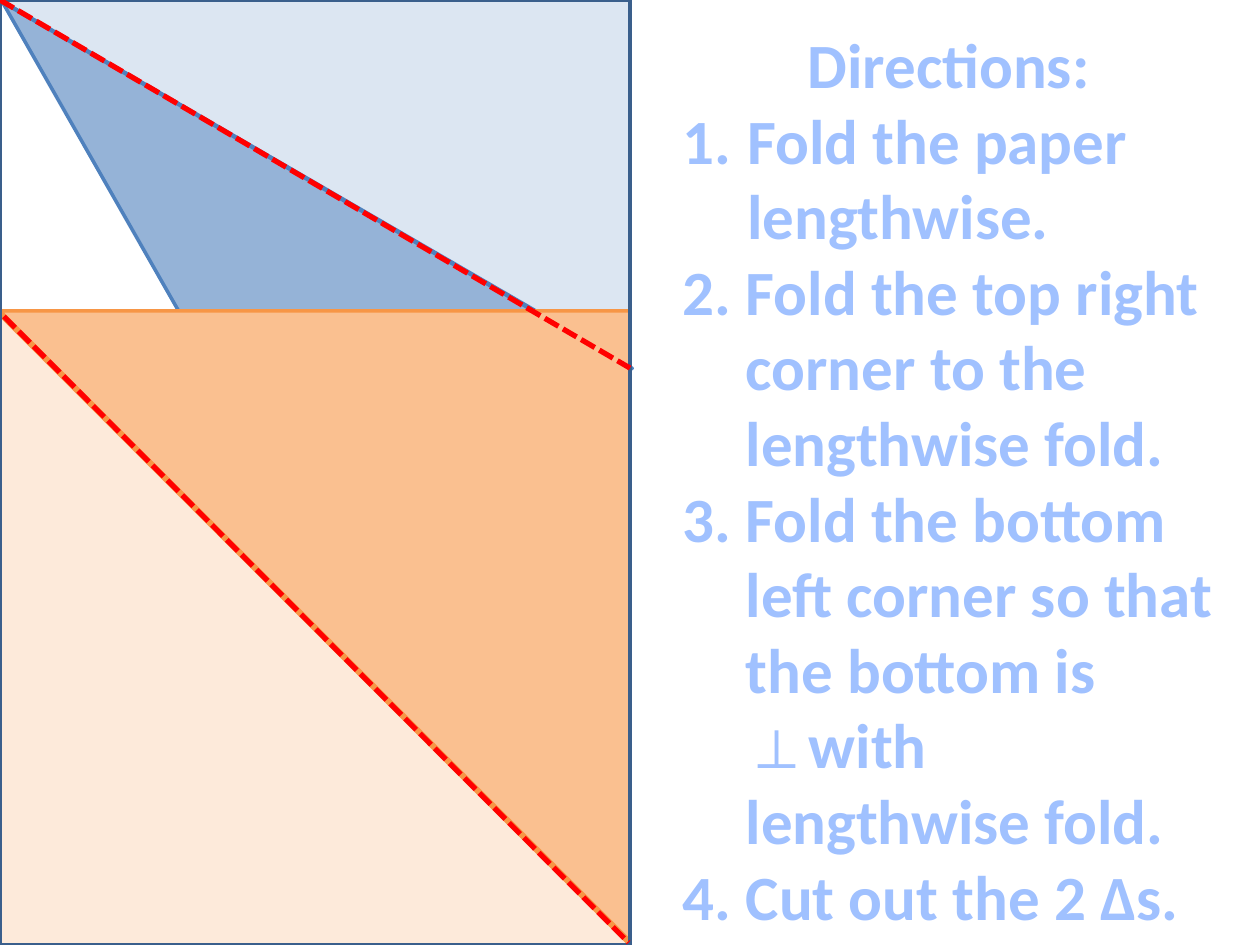
"""Build a slide with a paper-folding diagram and its directions."""
from lxml.etree import SubElement
from pptx import Presentation
from pptx.dml.color import RGBColor
from pptx.enum.dml import MSO_LINE
from pptx.enum.shapes import MSO_CONNECTOR, MSO_SHAPE
from pptx.enum.text import MSO_ANCHOR, MSO_AUTO_SIZE, PP_ALIGN
from pptx.oxml.ns import qn
from pptx.util import Cm, Pt


def tint(hue):
    return RGBColor.from_string(hue)


def write(para, text, font="Calibri"):
    run = para.add_run()
    run.text = text
    run.font.name = font
    run.font.size = Pt(36)
    run.font.bold = True
    run.font.color.rgb = tint("A0C1FF")


deck = Presentation()
deck.slide_width, deck.slide_height = Cm(25.4), Cm(19.05)
slide = deck.slides.add_slide(deck.slide_layouts[1])
shapes = slide.shapes
title, body = shapes.title, slide.placeholders[1]

for holder, top, height in [(title, 0.38, 1.65), (body, 1.91, 17.1)]:
    holder.left, holder.top = Cm(13.51), Cm(top)
    holder.width, holder.height = Cm(11.23), Cm(height)
    frame = holder.text_frame
    frame.word_wrap = True
    frame.auto_size = MSO_AUTO_SIZE.NONE
    frame.vertical_anchor = MSO_ANCHOR.TOP

head = title.text_frame.paragraphs[0]
head.alignment = PP_ALIGN.CENTER
write(head, "Directions:")

steps = [
    (1, 1.3, ["Fold the paper"]),
    (None, 1.3, ["lengthwise."]),
    (2, 1.27, ["Fold the top right corner to the lengthwise fold."]),
    (2, 1.27, ["Fold the bottom left corner so that the bottom is ", "⊥", "with lengthwise fold."]),
    (2, 1.27, ["Cut out the 2 Δs."]),
]
for index, (start, indent, parts) in enumerate(steps):
    frame = body.text_frame
    para = frame.add_paragraph() if index else frame.paragraphs[0]
    para.space_before = Pt(0)
    props = para._p.get_or_add_pPr()
    props.set("marL", str(Cm(indent)))
    props.set("indent", str(-Cm(indent) if start else 0))
    if start:
        SubElement(props, qn("a:buFont"), typeface="+mj-lt")
        SubElement(props, qn("a:buAutoNum"), type="arabicPeriod", startAt=str(start))
    else:
        SubElement(props, qn("a:buNone"))
    for part in parts:
        write(para, part, "Times New Roman" if part == "⊥" else "Calibri")

folds = [
    (0, 0, 7.37, 0, "hv", "DCE6F2", "4F81BD"),
    (0.05, 0.05, 7.37, 60.3, "h", "95B3D7", "4F81BD"),
    (0, 6.35, 12.7, 0, "", "FDEADA", "F79646"),
    (0, 6.27, 12.7, 270, "h", "FAC090", "F79646"),
    (0, 0, 19.05, 0, "", None, "3A5F8C"),
]
for left, top, height, turn, flip, fill, edge in folds:
    kind = MSO_SHAPE.RIGHT_TRIANGLE if fill else MSO_SHAPE.RECTANGLE
    fold = shapes.add_shape(kind, Cm(left), Cm(top), Cm(12.7), Cm(height))
    fold.rotation = turn
    for axis in flip:
        fold._element.spPr.xfrm.set("flip" + axis.upper(), "1")
    fold.shadow.inherit = False
    if fill:
        fold.fill.solid()
        fold.fill.fore_color.rgb = tint(fill)
    else:
        fold.fill.background()
    fold.line.color.rgb = tint(edge)
    fold.line.width = Pt(2)

for ends in [(0, 0, 12.7, 7.42), (0.08, 6.38, 12.67, 19)]:
    crease = shapes.add_connector(MSO_CONNECTOR.STRAIGHT, *map(Cm, ends))
    crease.line.color.rgb = tint("FF0000")
    crease.line.width = Pt(3)
    crease.line.dash_style = MSO_LINE.SQUARE_DOT
    SubElement(crease._element.spPr, qn("a:effectLst"))

deck.save("out.pptx")
